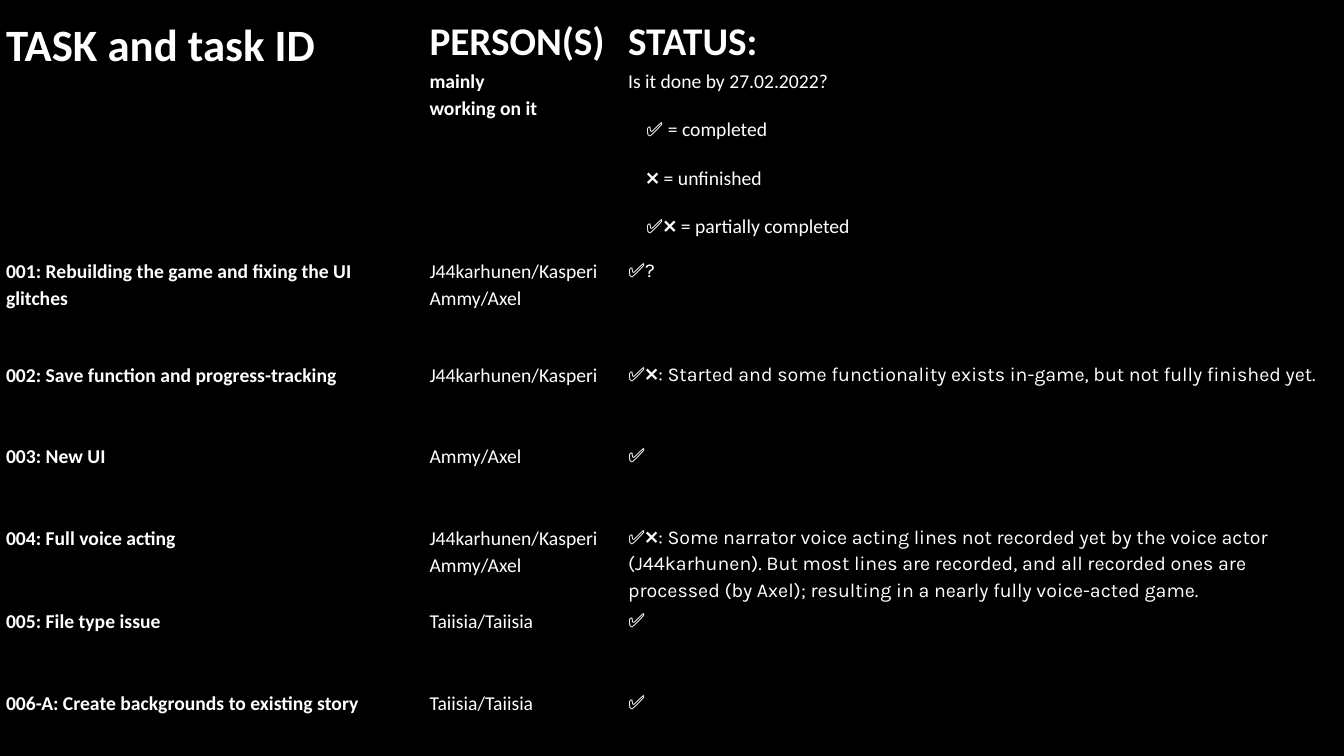
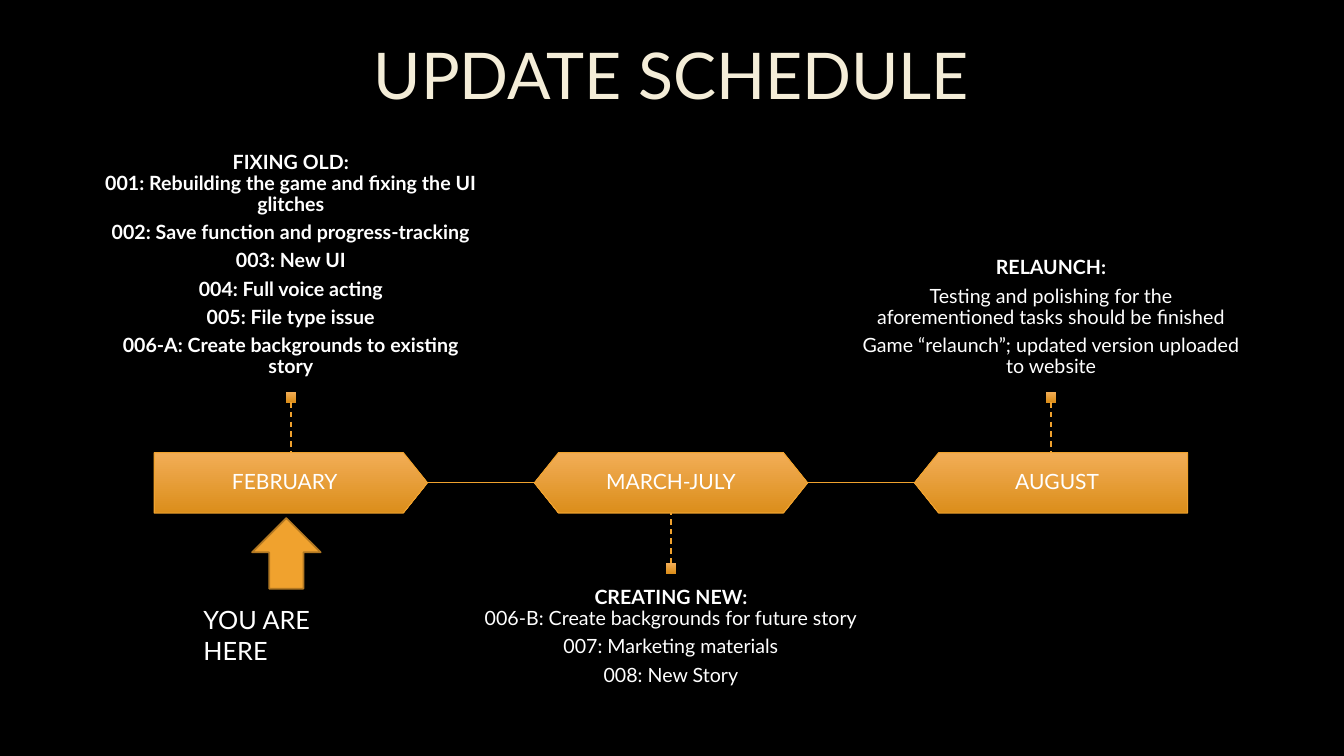
from copy import deepcopy

from lxml.etree import SubElement
from pptx import Presentation
from pptx.dml.color import RGBColor
from pptx.enum.dml import MSO_LINE
from pptx.enum.shapes import MSO_CONNECTOR, MSO_SHAPE
from pptx.enum.text import MSO_ANCHOR, MSO_AUTO_SIZE, PP_ALIGN
from pptx.oxml import parse_xml
from pptx.oxml.ns import nsdecls, qn
from pptx.util import Inches, Pt

COLORS = {
    "background": "000000",
    "text": "FFFFFF",
    "title": "F4EDD8",
    "accent": "F0A22E",
    "accent_light": "F2AD56",
    "accent_deep": "DB8E1B",
    "accent_edge": "B27822",
}
TABLE_FONT, STATUS_FONT, MARK_FONT, SCHEDULE_FONT = "Calibri", "Karla", "Times New Roman", "Lato"

DONE, UNFINISHED = "✅", "❌"
PARTIAL = DONE + UNFINISHED

TASKS = [
    ("001: Rebuilding the game and fixing the UI glitches",
     "J44karhunen/Kasperi\nAmmy/Axel", DONE, "?", 1.03),
    ("002: Save function and progress-tracking", "J44karhunen/Kasperi", PARTIAL,
     ": Started and some functionality exists in-game, but not fully finished yet.", 0.81),
    ("003: New UI", "Ammy/Axel", DONE, "", 0.81),
    ("004: Full voice acting", "J44karhunen/Kasperi\nAmmy/Axel", PARTIAL,
     ": Some narrator voice acting lines not recorded yet by the voice actor "
     "(J44karhunen). But most lines are recorded, and all recorded ones are "
     "processed (by Axel); resulting in a nearly fully voice-acted game.", 0.83),
    ("005: File type issue", "Taiisia/Taiisia", DONE, "", 0.81),
    ("006-A: Create backgrounds to existing story", "Taiisia/Taiisia", DONE, "", 0.65),
]


def rgb(name):
    """Return the named palette colour."""
    return RGBColor.from_string(COLORS[name])


def run(text, size=14, font=TABLE_FONT, bold=False, color="text"):
    """Describe one run of text."""
    return text, size, font, bold, color


def add_run(paragraph, text, size, font, bold, color):
    """Add a run, turning newlines into line breaks of the same size."""
    for index, line in enumerate(text.split("\n")):
        if index:
            paragraph.add_line_break()
            line_break = paragraph._p[-1]
            line_break.append(deepcopy(piece._r.rPr))
        piece = paragraph.add_run()
        piece.text = line
        piece.font.size = Pt(size)
        piece.font.name = font
        piece.font.bold = bold
        piece.font.color.rgb = rgb(color)


def write(frame, paragraphs, align=PP_ALIGN.LEFT, spacing=0.9, before=0, after=0):
    """Write paragraphs, each a list of runs, into a text frame."""
    for index, runs in enumerate(paragraphs):
        paragraph = frame.add_paragraph() if index else frame.paragraphs[0]
        paragraph.alignment = align
        paragraph.line_spacing = spacing
        paragraph.space_before = Pt(before if index else 0)
        paragraph.space_after = Pt(after)
        for piece in runs:
            add_run(paragraph, *piece)


def set_margins(holder, horizontal, top, bottom):
    """Set the inner margins of a text frame or a cell."""
    holder.margin_left = holder.margin_right = Inches(horizontal)
    holder.margin_top = Inches(top)
    holder.margin_bottom = Inches(bottom)


def fill_cell(cell, paragraphs):
    """Format one table cell and write its text."""
    set_margins(cell, 0.06, 0.01, 0)
    cell.fill.solid()
    cell.fill.fore_color.rgb = rgb("background")
    for index, side in enumerate(("lnL", "lnR", "lnT", "lnB")):
        border = parse_xml(
            f'<a:{side} {nsdecls("a")} w="12700"><a:solidFill>'
            f'<a:srgbClr val="{COLORS["background"]}"/></a:solidFill></a:{side}>')
        cell._tc.tcPr.insert(index, border)
    write(cell.text_frame, paragraphs, spacing=1.15, before=5, after=10)


def add_task_table(slide, left, top):
    """Place the table of tasks, people and status."""
    widths = (4.2, 1.97, 6.99)
    heights = [2.43] + [task[-1] for task in TASKS]
    table = slide.shapes.add_table(
        len(heights), len(widths), Inches(left), Inches(top),
        Inches(sum(widths)), Inches(sum(heights))).table
    table.first_row = table.horz_banding = False
    for column, width in zip(table.columns, widths):
        column.width = Inches(width)
    for row, height in zip(table.rows, heights):
        row.height = Inches(height)

    legend = [(DONE, "completed"), (UNFINISHED, "unfinished"), (PARTIAL, "partially completed")]
    rows = [(
        [[run("TASK and task ID", 32, bold=True)]],
        [[run("PERSON(S) ", 28, bold=True), run("mainly\nworking on it", bold=True)]],
        [[run("STATUS:\n", 28, bold=True), run("Is it done by 27.02.2022?")]]
        + [[run(mark, font=MARK_FONT), run(f" = {meaning}")] for mark, meaning in legend],
    )]
    for task, people, mark, note, _ in TASKS:
        status = [run(mark, font=MARK_FONT)]
        if note:
            status.append(run(note, font=STATUS_FONT))
        rows.append(([[run(task, bold=True)]], [[run(people)]], [status]))
    for row, contents in enumerate(rows):
        for column, paragraphs in enumerate(contents):
            fill_cell(table.cell(row, column), paragraphs)
    for paragraph in table.cell(0, 2).text_frame.paragraphs[1:]:
        paragraph._p.get_or_add_pPr().set("marL", str(Inches(0.18)))


def add_title(slide, text):
    """Place and format the slide title."""
    title = slide.shapes.title
    title.left, title.top, title.width, title.height = map(Inches, (1, 0.09, 11.32, 1.38))
    title.text_frame.auto_size = MSO_AUTO_SIZE.NONE
    title.text_frame.vertical_anchor = MSO_ANCHOR.MIDDLE
    write(title.text_frame, [[run(text, 46, SCHEDULE_FONT, color="title")]], PP_ALIGN.CENTER)


def add_box(slide, preset, left, top, width, height):
    """Add a shape with the accent gradient and no shadow."""
    box = slide.shapes.add_shape(preset, *map(Inches, (left, top, width, height)))
    box.shadow.inherit = False
    box.fill.gradient()
    box.fill.gradient_angle = 270
    for stop, color in zip(box.fill.gradient_stops, ("accent_light", "accent_deep")):
        stop.color.rgb = rgb(color)
    box.line.fill.background()
    return box


def add_line(slide, start, end, weight, dash=None):
    """Add a straight accent line."""
    line = slide.shapes.add_connector(MSO_CONNECTOR.STRAIGHT, *map(Inches, start + end))
    line.line.color.rgb = rgb("accent")
    line.line.width = Pt(weight)
    if dash:
        line.line.dash_style = dash
    SubElement(line._element.spPr, qn("a:effectLst"))
    return line


def add_text(slide, left, top, width, height):
    """Add an empty wrapping text box and return its frame."""
    frame = slide.shapes.add_textbox(*map(Inches, (left, top, width, height))).text_frame
    frame.word_wrap = True
    return frame


def add_milestone(slide, left, top, width, height, preset, label, caption, above, mirrored):
    """Place one period with its stem, marker and caption."""
    period = add_box(slide, preset, left, top, width, height)
    period.adjustments[0] = 0.4
    period.line.color.rgb = rgb("accent")
    period.line.width = Pt(0.75)
    if mirrored:
        period._element.spPr.xfrm.set("flipH", "1")
    frame = period.text_frame
    set_margins(frame, 0.12, 0.12, 0.12)
    frame.vertical_anchor = MSO_ANCHOR.MIDDLE
    write(frame, [[run(label, 15, SCHEDULE_FONT)]], PP_ALIGN.CENTER)

    center, stem, side = left + width / 2, 0.5, 0.1
    edge = top if above else top + height
    marker_edge = edge - stem if above else edge + stem
    marker_top = marker_edge - side if above else marker_edge
    marker = add_box(slide, MSO_SHAPE.RECTANGLE, center - side / 2, marker_top, side, side)
    line = add_line(slide, (center, marker_edge), (center, edge), 1, MSO_LINE.DASH)
    line.begin_connect(marker, 2 if above else 0)

    caption_width, caption_height = 3.77, 2.5 if above else 1.6
    caption_top = marker_top - caption_height if above else marker_top + side
    frame = add_text(slide, center - caption_width / 2, caption_top, caption_width, caption_height)
    set_margins(frame, 0, 0.14, 0.14)
    frame.vertical_anchor = MSO_ANCHOR.BOTTOM if above else MSO_ANCHOR.TOP
    write(frame, caption, PP_ALIGN.CENTER, after=5)


def add_timeline(slide, left, top):
    """Place the three milestones and the lines between them."""
    width, height, step = 2.71, 0.6, 3.77

    def bold(text):
        return run(text, font=SCHEDULE_FONT, bold=True)

    def plain(text):
        return run(text, font=SCHEDULE_FONT)

    old_tasks = [task[0] for task in TASKS]
    fixing = [[bold(f"FIXING OLD:\n{old_tasks[0]}")]] + [[bold(task)] for task in old_tasks[1:]]
    creating = [
        [bold("CREATING NEW:\n"), plain("006-B: Create backgrounds for future story")],
        [plain("007: Marketing materials")],
        [plain("008: New Story")],
    ]
    relaunch = [
        [bold("RELAUNCH:")],
        [plain("Testing and polishing for the aforementioned tasks should be finished")],
        [plain("Game “relaunch”; updated version uploaded to website")],
    ]
    milestones = [
        (MSO_SHAPE.PENTAGON, "FEBRUARY", fixing, True, False),
        (MSO_SHAPE.HEXAGON, "MARCH-JULY", creating, False, False),
        (MSO_SHAPE.PENTAGON, "AUGUST", relaunch, True, True),
    ]
    for index, milestone in enumerate(milestones):
        x = left + index * step
        add_milestone(slide, x, top, width, height, *milestone)
        if index:
            middle = top + height / 2
            add_line(slide, (x - step + width, middle), (x, middle), 0.75)


def add_position_note(slide, left, top):
    """Place the arrow and the note under the current period."""
    arrow = add_box(slide, MSO_SHAPE.UP_ARROW, left + 0.58, top, 0.68, 0.7)
    arrow.fill.solid()
    arrow.fill.fore_color.rgb = rgb("accent")
    arrow.line.color.rgb = rgb("accent_edge")
    arrow.line.width = Pt(1.25)
    frame = add_text(slide, left, top + 0.81, 1.6, 0.7)
    write(frame, [[run("YOU ARE HERE", 18, SCHEDULE_FONT)]], spacing=1)


def build_task_slide(prs):
    """Build the slide with the task status table."""
    slide = prs.slides.add_slide(prs.slide_layouts[6])
    add_task_table(slide, 0, 0.1)


def build_schedule_slide(prs):
    """Build the slide with the update schedule."""
    slide = prs.slides.add_slide(prs.slide_layouts[5])
    add_title(slide, "UPDATE SCHEDULE")
    add_timeline(slide, 1.53, 4.49)
    add_position_note(slide, 1.92, 5.14)


def main():
    """Build and save the presentation."""
    prs = Presentation()
    prs.slide_width, prs.slide_height = Inches(13.33), Inches(7.5)
    backdrop = prs.slide_master.background.fill
    backdrop.solid()
    backdrop.fore_color.rgb = rgb("background")
    build_task_slide(prs)
    build_schedule_slide(prs)
    prs.save("out.pptx")


if __name__ == "__main__":
    main()
